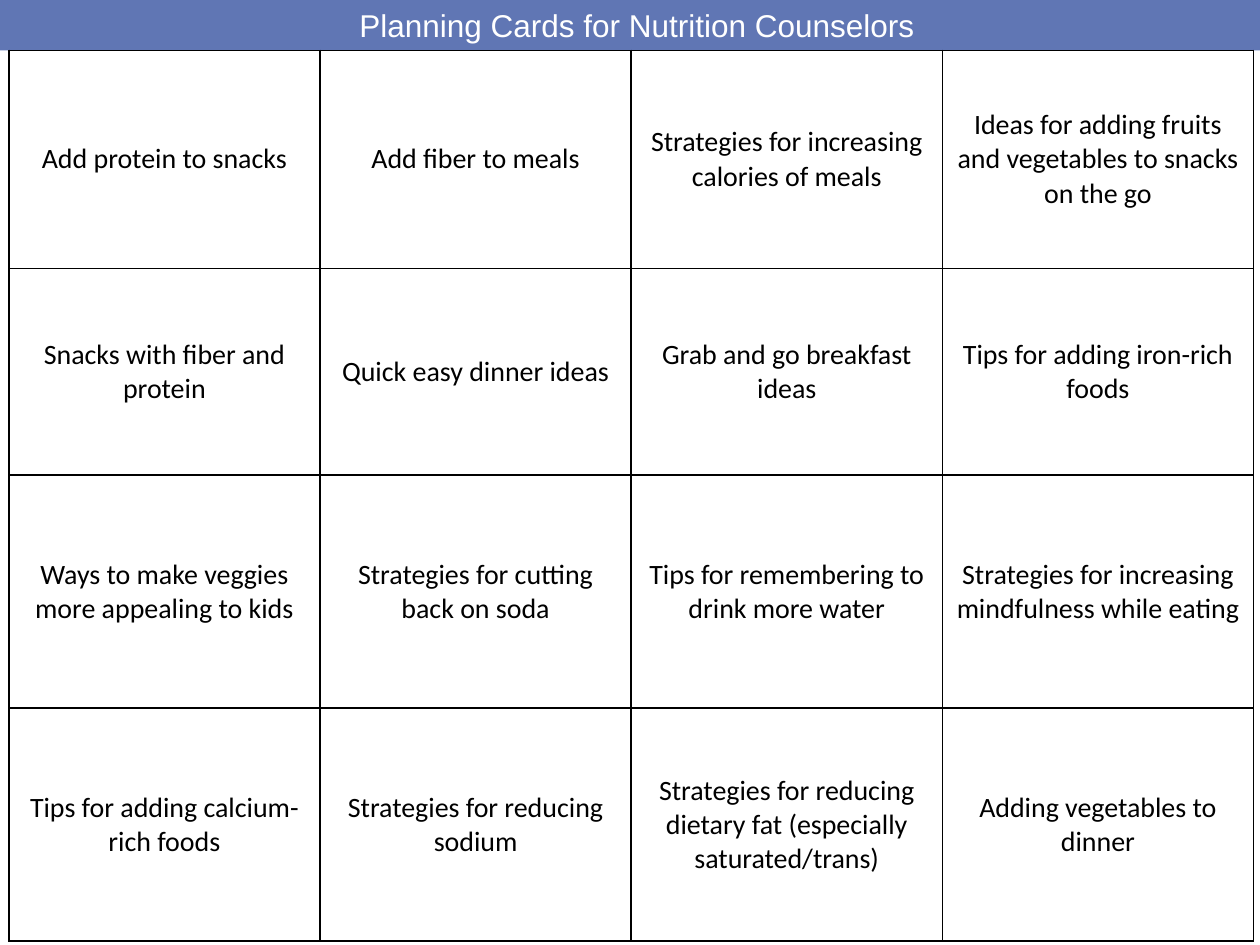
import dataclasses

import pptx
import pptx.dml.color
import pptx.enum.shapes
import pptx.enum.text
import pptx.oxml
import pptx.oxml.ns
import pptx.util


@dataclasses.dataclass(frozen=True)
class Theme:
    band: str = "6076B4"
    title: str = "FFFFFF"
    ink: str = "000000"
    title_font: str = "Arial"
    card_font: str = "Calibri"
    title_size: int = 18
    card_size: int = 16
    rule_width: int = 1


THEME = Theme()
WIDTH, HEIGHT = 10, 7.5
BAND_HEIGHT = 0.4
TABLE_LEFT = 0.07
COLUMN_WIDTH = 2.47
ROW_HEIGHTS = [1.73, 1.64, 1.85, 1.85]
CELL_INSET = 0.07

CARDS = [
    ["Add protein to snacks", "Add fiber to meals",
     "Strategies for increasing calories of meals",
     "Ideas for adding fruits and vegetables to snacks on the go"],
    ["Snacks with fiber and protein", "Quick easy dinner ideas",
     "Grab and go breakfast ideas", "Tips for adding iron-rich foods"],
    ["Ways to make veggies more appealing to kids",
     "Strategies for cutting back on soda",
     "Tips for remembering to drink more water",
     "Strategies for increasing mindfulness while eating"],
    ["Tips for adding calcium-rich foods", "Strategies for reducing sodium",
     "Strategies for reducing dietary fat (especially saturated/trans)",
     "Adding vegetables to dinner"],
]


def inches(*lengths):
    return [pptx.util.Inches(length) for length in lengths]


def rgb(color):
    return pptx.dml.color.RGBColor.from_string(color)


def write(frame, text, *, font, size, color):
    """Put one centred paragraph into a text frame."""
    para = frame.paragraphs[0]
    para.alignment = pptx.enum.text.PP_ALIGN.CENTER
    span = para.add_run()
    span.text = text
    span.font.name = font
    span.font.size = pptx.util.Pt(size)
    span.font.color.rgb = rgb(color)


def add_band(page):
    band = page.shapes.add_shape(
        pptx.enum.shapes.MSO_SHAPE.RECTANGLE, *inches(0, 0, WIDTH, BAND_HEIGHT))
    band.shadow.inherit = False
    band.fill.solid()
    band.fill.fore_color.rgb = rgb(THEME.band)
    band.line.fill.background()


def add_title(page, text):
    box = page.shapes.add_textbox(*inches(1.46, 0, 7.19, BAND_HEIGHT))
    box.text_frame.word_wrap = True
    write(box.text_frame, text, font=THEME.title_font,
          size=THEME.title_size, color=THEME.title)


def rule_cell(cell):
    """Draw all four borders; they must come before the fill in the XML."""
    properties = cell._tc.get_or_add_tcPr()
    for index, side in enumerate(("lnL", "lnR", "lnT", "lnB")):
        properties.insert(index, pptx.oxml.parse_xml(
            f'<a:{side} {pptx.oxml.ns.nsdecls("a")} '
            f'w="{pptx.util.Pt(THEME.rule_width)}"><a:solidFill>'
            f'<a:srgbClr val="{THEME.ink}"/></a:solidFill></a:{side}>'))


def format_card(cell, text):
    cell.fill.background()
    cell.vertical_anchor = pptx.enum.text.MSO_ANCHOR.MIDDLE
    cell.margin_left = cell.margin_right = pptx.util.Inches(CELL_INSET)
    cell.margin_top = cell.margin_bottom = 0
    write(cell.text_frame, text, font=THEME.card_font,
          size=THEME.card_size, color=THEME.ink)
    rule_cell(cell)


def add_cards(page, cards):
    columns = len(cards[0])
    table = page.shapes.add_table(
        len(cards), columns,
        *inches(TABLE_LEFT, BAND_HEIGHT, columns * COLUMN_WIDTH,
                sum(ROW_HEIGHTS))).table
    table.first_row = table.horz_banding = False
    for column in table.columns:
        column.width = pptx.util.Inches(COLUMN_WIDTH)
    for row, height, texts in zip(table.rows, ROW_HEIGHTS, cards):
        row.height = pptx.util.Inches(height)
        for cell, text in zip(row.cells, texts):
            format_card(cell, text)


def main():
    deck = pptx.Presentation()
    deck.slide_width, deck.slide_height = inches(WIDTH, HEIGHT)
    page = deck.slides.add_slide(deck.slide_layouts[6])

    # Header band, card grid, then the title on top
    add_band(page)
    add_cards(page, CARDS)
    add_title(page, "Planning Cards for Nutrition Counselors")

    deck.save("out.pptx")


if __name__ == "__main__":
    main()
